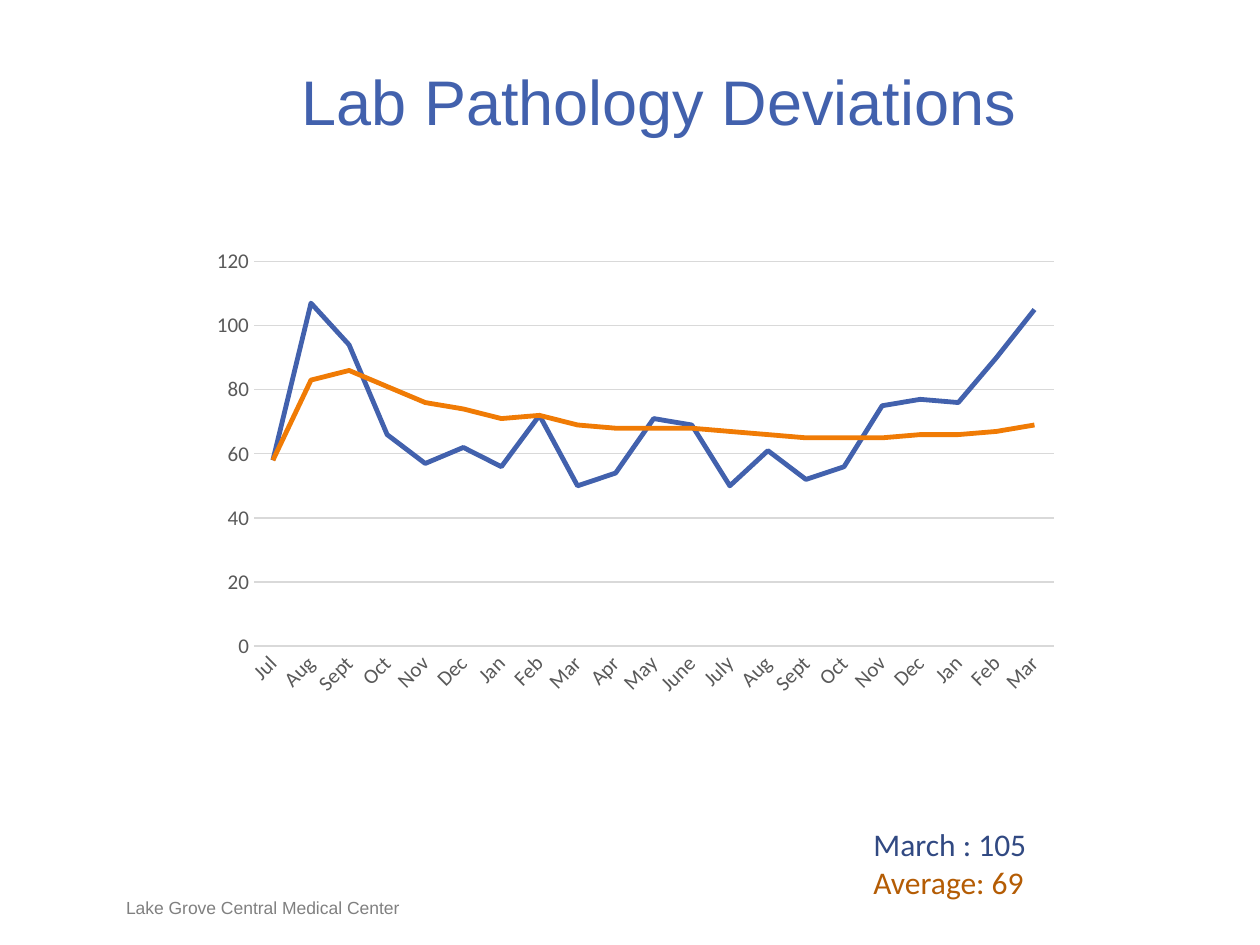
import pptx
import pptx.chart.data
import pptx.dml.color
import pptx.enum.chart
import pptx.enum.text
import pptx.util

Pt = pptx.util.Pt
ALIGN = pptx.enum.text.PP_ALIGN
ANCHOR = pptx.enum.text.MSO_ANCHOR
TICK = pptx.enum.chart.XL_TICK_MARK

BLUE, ORANGE = "4261AD", "F07B05"
GRID, LABEL = "D9D9D9", "595959"

MONTHS = ["Jul", "Aug", "Sept", "Oct", "Nov", "Dec", "Jan", "Feb", "Mar", "Apr", "May",
          "June", "July", "Aug", "Sept", "Oct", "Nov", "Dec", "Jan", "Feb", "Mar"]
SERIES = [
    ("Series 1", BLUE, [58, 107, 94, 66, 57, 62, 56, 72, 50, 54, 71,
                        69, 50, 61, 52, 56, 75, 77, 76, 90, 105]),
    ("Series 2", ORANGE, [58, 83, 86, 81, 76, 74, 71, 72, 69, 68, 68,
                          68, 67, 66, 65, 65, 65, 66, 66, 67, 69]),
]


def color(value):
    return pptx.dml.color.RGBColor.from_string(value)


def set_font(font, name, size, value):
    font.name = name
    font.size = Pt(size)
    font.color.rgb = color(value)


def add_text(slide, box, lines, font_name, size, align=ALIGN.LEFT,
             anchor=ANCHOR.TOP, margins=(0, 0)):
    """Add a text box; lines holds (text, colour) pairs, one per paragraph."""
    shape = slide.shapes.add_textbox(*map(Pt, box))
    text_frame = shape.text_frame
    text_frame.word_wrap = True
    text_frame.vertical_anchor = anchor
    text_frame.margin_left = text_frame.margin_right = Pt(margins[0])
    text_frame.margin_top = text_frame.margin_bottom = Pt(margins[1])
    text_frame.text = "\n".join(text for text, _ in lines)
    for paragraph, (_, value) in zip(text_frame.paragraphs, lines):
        paragraph.alignment = align
        set_font(paragraph.runs[0].font, font_name, size, value)


def style_axis(axis):
    axis.major_tick_mark = axis.minor_tick_mark = TICK.NONE
    set_font(axis.tick_labels.font, "Calibri", 12, LABEL)


def add_line_chart(slide, box):
    data = pptx.chart.data.CategoryChartData()
    data.categories = MONTHS
    for name, _, values in SERIES:
        data.add_series(name, values)
    chart = slide.shapes.add_chart(
        pptx.enum.chart.XL_CHART_TYPE.LINE, *map(Pt, box), data).chart
    chart.has_legend = False
    chart.has_title = False
    set_font(chart.font, "Calibri", 10, "000000")

    # Lines
    plot = chart.plots[0]
    plot.vary_by_categories = False
    for series, (_, value, _) in zip(plot.series, SERIES):
        series.smooth = False
        series.format.line.color.rgb = color(value)
        series.format.line.width = Pt(2.75)
        series.marker.style = pptx.enum.chart.XL_MARKER_STYLE.NONE

    # Month axis, with slanted labels
    months = chart.category_axis
    style_axis(months)
    months.format.line.color.rgb = color(GRID)
    months.format.line.width = Pt(1)
    months._element.txPr.bodyPr.set("rot", "-2700000")

    # Value axis
    counts = chart.value_axis
    style_axis(counts)
    counts.minimum_scale, counts.maximum_scale, counts.major_unit = 0, 120, 20
    counts.format.line.fill.background()
    counts.major_gridlines.format.line.color.rgb = color(GRID)
    counts.major_gridlines.format.line.width = Pt(0.75)


def main():
    presentation = pptx.Presentation()
    presentation.slide_width, presentation.slide_height = Pt(720), Pt(540)
    slide = presentation.slides.add_slide(presentation.slide_layouts[6])

    # Footer and title
    add_text(slide, (72, 512.6, 228, 12.2), [("Lake Grove Central Medical Center", "808080")],
             "Arial", 10, anchor=ANCHOR.BOTTOM)
    add_text(slide, (70.5, 36, 612, 44), [("Lab Pathology Deviations", BLUE)],
             "Arial", 36, align=ALIGN.CENTER)

    # Latest values
    add_text(slide, (492, 468, 144, 51), [("March : 105", "314982"), ("Average: 69", "B45C04")],
             "Calibri", 18, margins=(7.2, 3.6))

    # Deviations by month
    add_line_chart(slide, (114, 137, 498, 266.4))

    presentation.save("out.pptx")


if __name__ == "__main__":
    main()
